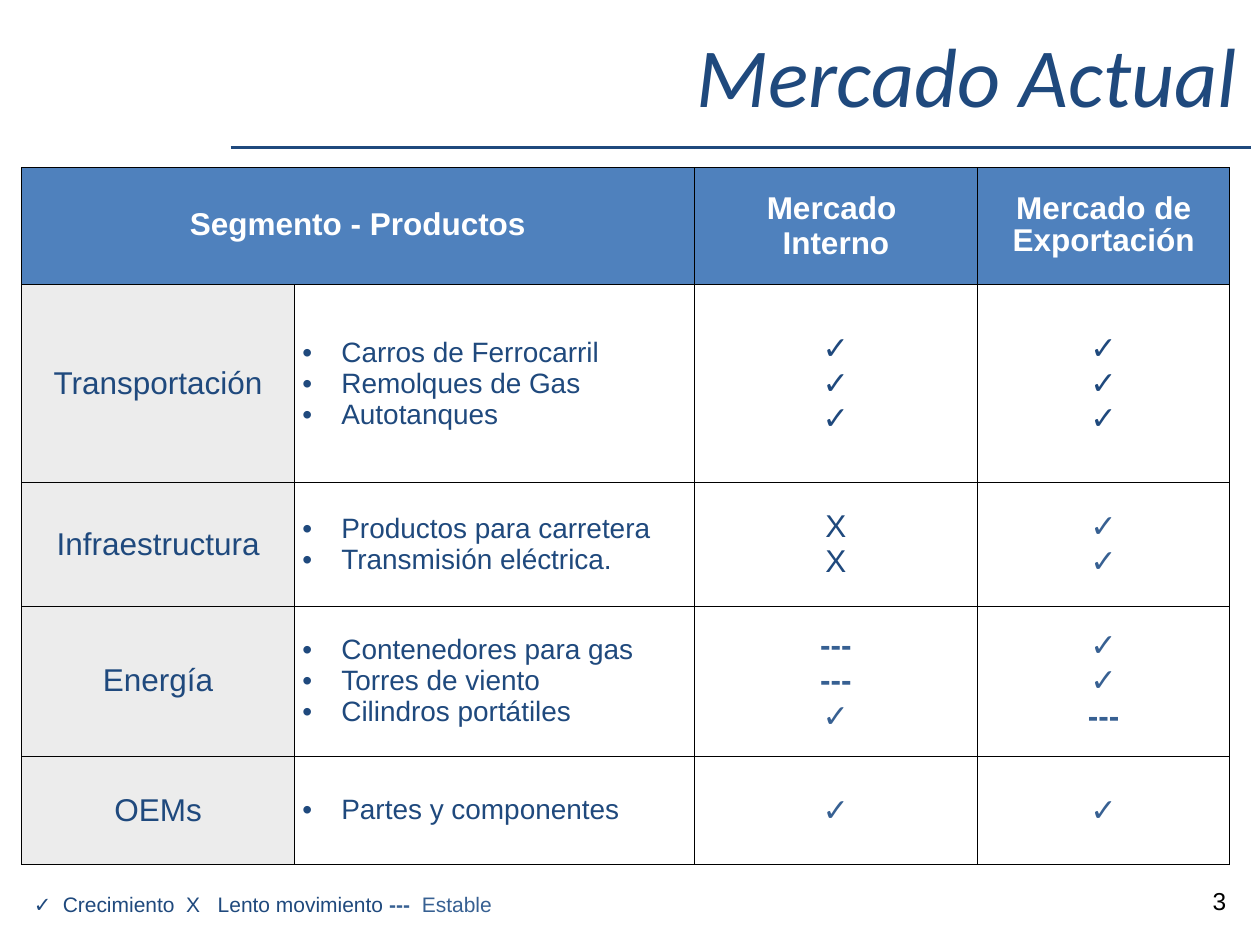
from pptx import Presentation
from pptx import util as u
from pptx.dml.color import RGBColor
from pptx.enum import shapes, text
from pptx.oxml.ns import qn
from lxml import etree

NAVY, STEEL, BLUE = "1F497D", "376092", "4F81BD"
GREY, WHITE, BLACK = "ECECEC", "FFFFFF", "000000"
LEFT, CENTER, RIGHT = text.PP_ALIGN.LEFT, text.PP_ALIGN.CENTER, text.PP_ALIGN.RIGHT

COLS = [2.17, 3.17, 2.25, 2]
ROWS = [0.93, 1.57, 0.98, 1.19, 0.86]
UP, SLOW, STABLE = "✓", "X", "---"

# Segment, products, home market, export market, colour of each market
SEGMENTS = [
    ("Transportación", ["Carros de Ferrocarril", "Remolques de Gas", "Autotanques"],
     [UP] * 3, [UP] * 3, NAVY, NAVY),
    ("Infraestructura", ["Productos para carretera", "Transmisión eléctrica."],
     [SLOW] * 2, [UP] * 2, NAVY, STEEL),
    ("Energía", ["Contenedores para gas", "Torres de viento", "Cilindros portátiles"],
     [STABLE, STABLE, UP], [UP, UP, STABLE], STEEL, STEEL),
    ("OEMs", ["Partes y componentes"], [UP], [UP], STEEL, STEEL),
]


def rgb(value):
    return RGBColor.from_string(value)


def style(font, size, color, bold=False, name="Arial", italic=False):
    font.size, font.name = u.Pt(size), name
    font.bold, font.italic = bold, italic
    font.color.rgb = rgb(color)


def add_line(s, x1, x2, y):
    ln = s.shapes.add_connector(shapes.MSO_CONNECTOR.STRAIGHT,
                                u.Inches(x1), u.Inches(y), u.Inches(x2), u.Inches(y))
    ln.line.color.rgb, ln.line.width = rgb(NAVY), u.Pt(1.5)
    etree.SubElement(ln._element.spPr, qn("a:effectLst"))


def add_title(s, title):
    sp = s.shapes.title
    sp.left, sp.top, sp.width, sp.height = map(u.Inches, (2.75, 0.25, 7.17, 0.67))
    tf = sp.text_frame
    tf.text = title
    tf.vertical_anchor = text.MSO_ANCHOR.MIDDLE
    tf.auto_size = text.MSO_AUTO_SIZE.NONE
    p = tf.paragraphs[0]
    p.alignment = RIGHT
    style(p.runs[0].font, 48, NAVY, name="Calibri", italic=True)


def add_text_box(s, x, y, w, h):
    tf = s.shapes.add_textbox(*map(u.Inches, (x, y, w, h))).text_frame
    tf.word_wrap = True
    return tf


def add_borders(cell):
    tcPr = cell._tc.get_or_add_tcPr()
    for side in ("a:lnL", "a:lnR", "a:lnT", "a:lnB"):
        ln = etree.SubElement(tcPr, qn(side), w=str(u.Pt(0.5)))
        fill = etree.SubElement(ln, qn("a:solidFill"))
        etree.SubElement(fill, qn("a:srgbClr"), val=BLACK)


def add_bullet(p):
    pPr = p._p.get_or_add_pPr()
    pPr.set("marL", str(u.Inches(0.31)))
    pPr.set("indent", str(-u.Inches(0.31)))
    etree.SubElement(pPr, qn("a:buFont"), typeface="Arial")
    etree.SubElement(pPr, qn("a:buChar"), char="•")


def fill_cell(cell, lines, fill, color, size=18, bold=False, bullets=False, spacing=None):
    cell.fill.solid()
    cell.fill.fore_color.rgb = rgb(fill)
    cell.vertical_anchor = text.MSO_ANCHOR.MIDDLE
    cell.margin_left = cell.margin_right = u.Inches(0.06)
    cell.margin_top = cell.margin_bottom = u.Inches(0.06)
    tf = cell.text_frame
    tf.text = "\n".join(lines)
    for p in tf.paragraphs:
        p.alignment = LEFT if bullets else CENTER
        if spacing:
            p.line_spacing = spacing
        if bullets:
            add_bullet(p)
        for r in p.runs:
            style(r.font, size, color, bold)


def add_market_table(s):
    frame = s.shapes.add_table(len(ROWS), len(COLS), u.Inches(0.17), u.Inches(1.33),
                               u.Inches(sum(COLS)), u.Inches(sum(ROWS)))
    table = frame.table
    table.first_row = table.horz_banding = False
    for col, width in zip(table.columns, COLS):
        col.width = u.Inches(width)
    for row, height in zip(table.rows, ROWS):
        row.height = u.Inches(height)
    for cell in table.iter_cells():
        add_borders(cell)

    # Header row
    table.cell(0, 0).merge(table.cell(0, 1))
    headers = [(0, ["Segmento - Productos"], 0.9),
               (2, ["Mercado ", "Interno"], None),
               (3, ["Mercado de Exportación"], 0.9)]
    for c, lines, spacing in headers:
        fill_cell(table.cell(0, c), lines, BLUE, WHITE, bold=True, spacing=spacing)

    # One row per segment
    for i, (segment, products, home, export, home_color, export_color) in enumerate(SEGMENTS, 1):
        fill_cell(table.cell(i, 0), [segment], GREY, NAVY)
        fill_cell(table.cell(i, 1), products, WHITE, NAVY, size=16, bullets=True)
        fill_cell(table.cell(i, 2), home, WHITE, home_color, bold=home_color == STEEL)
        fill_cell(table.cell(i, 3), export, WHITE, export_color, bold=export_color == STEEL)


def add_legend(s):
    p = add_text_box(s, 0.17, 7.03, 3.86, 0.3).paragraphs[0]
    tabs = etree.SubElement(p._p.get_or_add_pPr(), qn("a:tabLst"))
    for pos in (0.23, 1.21, 1.46, 2.82, 3.08):
        etree.SubElement(tabs, qn("a:tab"), pos=str(u.Inches(pos)), algn="l")
    parts = [("✓\tCrecimiento\tX\tLento movimiento\t", NAVY, False),
             ("---\t", STEEL, True), ("Estable", STEEL, False)]
    for words, color, bold in parts:
        r = p.add_run()
        r.text = words
        style(r.font, 12, color, bold)


def add_page_number(s, number):
    tf = add_text_box(s, 9.33, 6.95, 0.5, 0.4)
    tf.text = number
    tf.vertical_anchor = text.MSO_ANCHOR.MIDDLE
    p = tf.paragraphs[0]
    p.alignment = RIGHT
    style(p.runs[0].font, 14, BLACK)


def main():
    prs = Presentation()
    prs.slide_width, prs.slide_height = u.Inches(10), u.Inches(7.5)
    s = prs.slides.add_slide(prs.slide_layouts[5])
    add_line(s, 1.83, 9.93, 1.17)
    add_title(s, "Mercado Actual")
    add_market_table(s)
    add_legend(s)
    add_page_number(s, "3")
    prs.save("out.pptx")


if __name__ == "__main__":
    main()
